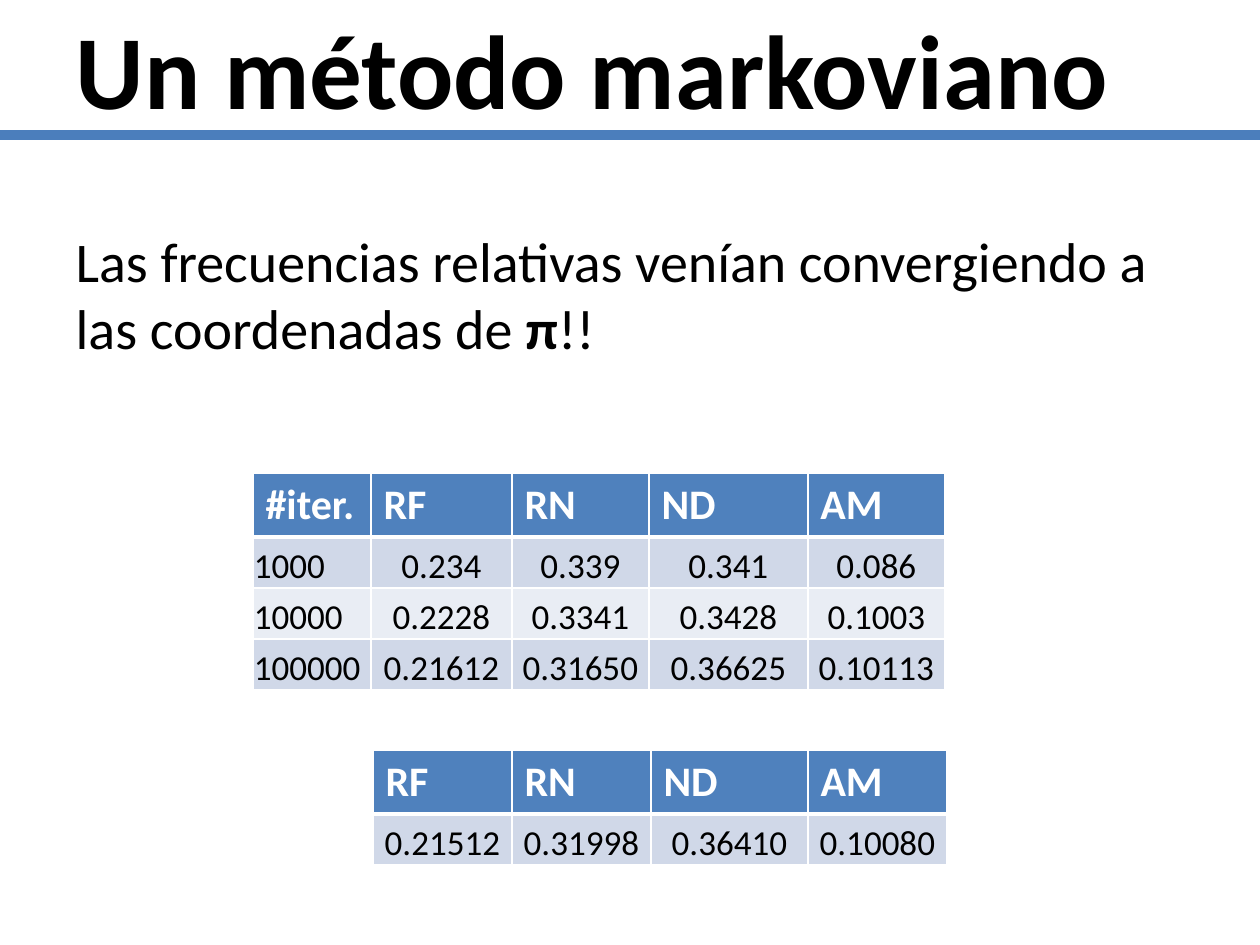
"""Build the slide on the Markov method with its two frequency tables."""
import lxml.etree
import pptx
import pptx.dml.color
import pptx.enum.shapes
import pptx.enum.text
import pptx.oxml.ns
import pptx.util

TITLE = "Un método markoviano"
BODY = [
    ("Las frecuencias relativas venían convergiendo a las coordenadas de ", False),
    ("π", True),
    ("!!", False),
]
LIMIT = {
    "at": (373, 750),
    "cols": [139, 139, 157, 139],
    "rows": [
        ["RF", "RN", "ND", "AM"],
        ["0.21512", "0.31998", "0.36410", "0.10080"],
    ],
    "labels": 0,
}
ITERATIONS = {
    "at": (253, 473),
    "cols": [118, 141, 137, 159, 137],
    "rows": [
        ["#iter.", "RF", "RN", "ND", "AM"],
        ["1000", "0.234", "0.339", "0.341", "0.086"],
        ["10000", "0.2228", "0.3341", "0.3428", "0.1003"],
        ["100000", "0.21612", "0.31650", "0.36625", "0.10113"],
    ],
    "labels": 1,
}
THEME = {
    "font": "Calibri",
    "text": "000000",
    "light": "FFFFFF",
    "rule": "4B7EBC",
    "header": "4F81BD",
    "bands": ["D0D8E8", "E9EDF4"],
    "title_size": 60,
    "body_size": 32,
    "header_size": 24,
    "cell_size": 20,
}
HEADER_HEIGHT, ROW_HEIGHT = 64, 51
ALIGN = pptx.enum.text.PP_ALIGN
ANCHOR = pptx.enum.text.MSO_ANCHOR


def px(n):
    return pptx.util.Emu(round(n * 914400 / 126))


def rgb(value):
    return pptx.dml.color.RGBColor.from_string(value)


def add_text(p, text, size, color=THEME["text"], bold=False, align=ALIGN.LEFT):
    p.alignment = align
    r = p.add_run()
    r.text = text
    r.font.name = THEME["font"]
    r.font.size = pptx.util.Pt(size)
    r.font.bold = bold
    r.font.color.rgb = rgb(color)


def place(sp, x, y, w, h):
    sp.left, sp.top, sp.width, sp.height = map(px, (x, y, w, h))


def set_borders(cell, bottom):
    tc_pr = cell._tc.get_or_add_tcPr()
    for i, side in enumerate("LRTB"):
        width = pptx.util.Pt(bottom if side == "B" else 1)
        ln = lxml.etree.Element(pptx.oxml.ns.qn(f"a:ln{side}"), w=str(width))
        fill = lxml.etree.SubElement(ln, pptx.oxml.ns.qn("a:solidFill"))
        lxml.etree.SubElement(fill, pptx.oxml.ns.qn("a:srgbClr"), val=THEME["light"])
        tc_pr.insert(i, ln)


def format_cell(cell, text, row, is_label):
    p = cell.text_frame.paragraphs[0]
    cell.fill.solid()
    if row == 0:
        cell.fill.fore_color.rgb = rgb(THEME["header"])
        add_text(p, text, THEME["header_size"], color=THEME["light"], bold=True)
    else:
        cell.fill.fore_color.rgb = rgb(THEME["bands"][(row - 1) % 2])
        cell.margin_left = cell.margin_right = cell.margin_top = px(1)
        cell.margin_bottom = 0
        cell.vertical_anchor = ANCHOR.BOTTOM
        align = ALIGN.LEFT if is_label else ALIGN.CENTER
        add_text(p, text, THEME["cell_size"], align=align)
    set_borders(cell, bottom=3 if row == 0 else 1)


def add_table(s, data):
    rows, cols = data["rows"], data["cols"]
    heights = [HEADER_HEIGHT] + [ROW_HEIGHT] * (len(rows) - 1)
    x, y = data["at"]
    table = s.shapes.add_table(
        len(rows), len(cols), px(x), px(y), px(sum(cols)), px(sum(heights))
    ).table
    for column, width in zip(table.columns, cols):
        column.width = px(width)
    for i, values in enumerate(rows):
        table.rows[i].height = px(heights[i])
        for j, text in enumerate(values):
            format_cell(table.cell(i, j), text, i, j < data["labels"])


def add_rule(s, y, width):
    line = s.shapes.add_connector(
        pptx.enum.shapes.MSO_CONNECTOR.STRAIGHT, 0, px(y), px(width), px(y)
    )
    line.line.color.rgb = rgb(THEME["rule"])
    line.line.width = pptx.util.Pt(6)
    lxml.etree.SubElement(line._element.spPr, pptx.oxml.ns.qn("a:effectLst"))


def add_title(s):
    sp = s.shapes.title
    place(sp, 63, 0, 1134, 135)
    tf = sp.text_frame
    tf.auto_size = pptx.enum.text.MSO_AUTO_SIZE.NONE
    tf.vertical_anchor = ANCHOR.MIDDLE
    add_text(tf.paragraphs[0], TITLE, THEME["title_size"], bold=True)


def add_body(s):
    sp = s.placeholders[1]
    place(sp, 63, 220, 1134, 624)
    tf = sp.text_frame
    tf.auto_size = pptx.enum.text.MSO_AUTO_SIZE.NONE
    p = tf.paragraphs[0]
    for text, bold in BODY:
        add_text(p, text, THEME["body_size"], bold=bold)
    p_pr = p._p.get_or_add_pPr()
    p_pr.set("marL", "0")
    p_pr.set("indent", "0")
    lxml.etree.SubElement(p_pr, pptx.oxml.ns.qn("a:buNone"))


def main():
    prs = pptx.Presentation()
    prs.slide_width, prs.slide_height = px(1260), px(945)
    s = prs.slides.add_slide(prs.slide_layouts[1])
    add_rule(s, 135, 1260)
    add_body(s)
    add_title(s)
    for data in (LIMIT, ITERATIONS):
        add_table(s, data)
    prs.save("out.pptx")


if __name__ == "__main__":
    main()
